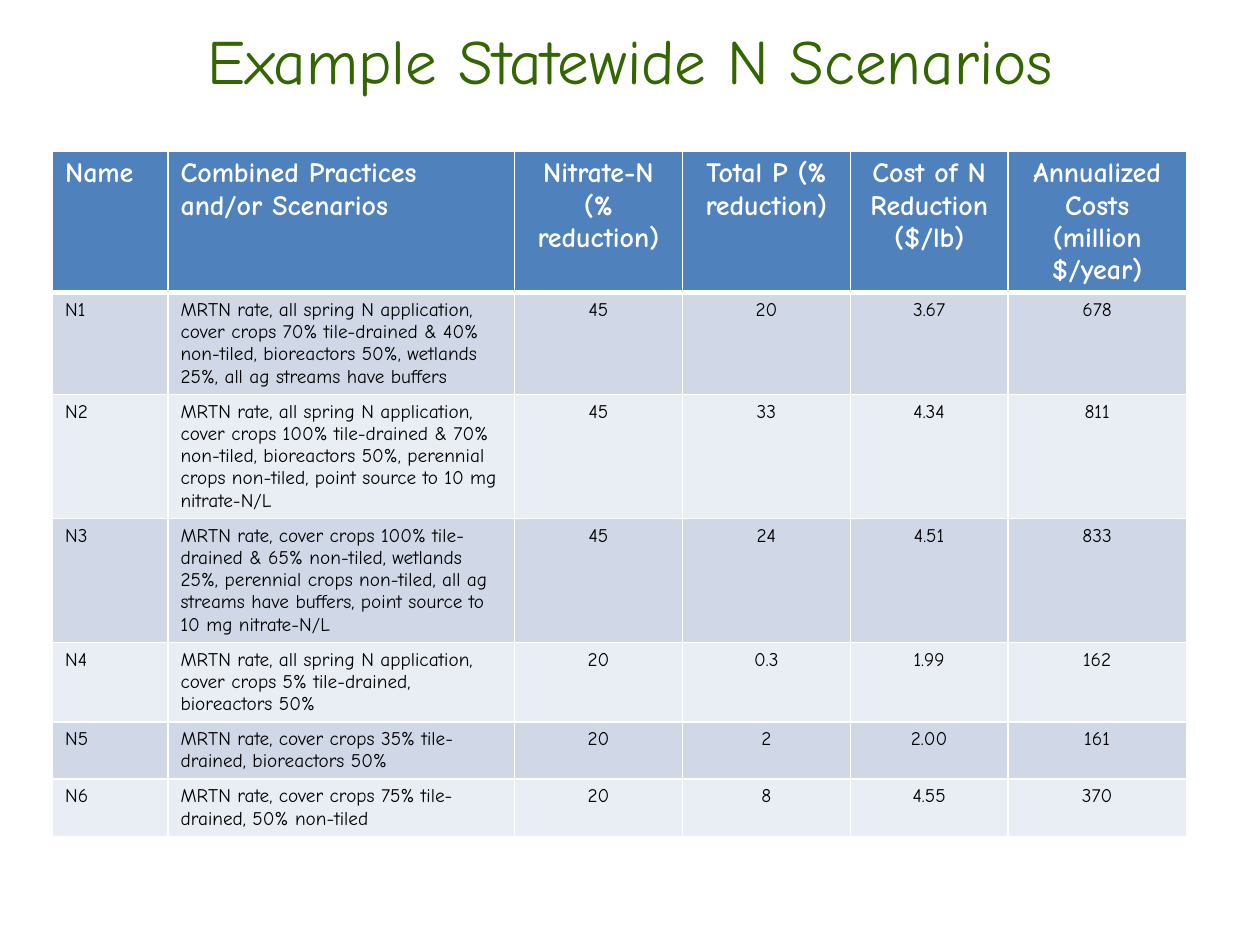
from dataclasses import dataclass

from lxml import etree
from pptx import Presentation
from pptx.dml.color import RGBColor
from pptx.enum.text import MSO_ANCHOR, PP_ALIGN
from pptx.oxml.ns import qn
from pptx.util import Pt

LEFT, CENTER = PP_ALIGN.LEFT, PP_ALIGN.CENTER
MIDDLE = MSO_ANCHOR.MIDDLE
TITLE_ONLY = 5


@dataclass(frozen=True)
class Theme:
    font: str = "Comic Neue"
    title_color: str = "336600"
    header_fill: str = "4F81BD"
    header_color: str = "FFFFFF"
    body_color: str = "000000"
    band_fills: tuple = ("D0D8E8", "E9EDF4")
    border_color: str = "FFFFFF"
    title_size: float = 36
    header_size: float = 16
    body_size: float = 11
    border_width: float = 1
    header_rule_width: float = 3


THEME = Theme()

TITLE = "Example Statewide N Scenarios"
HEADERS = ("Name", "Combined Practices and/or Scenarios", "Nitrate-N (% reduction)",
           "Total P (% reduction)", "Cost of N Reduction ($/lb)",
           "Annualized Costs (million $/year)")
SCENARIOS = (
    ("N1", "MRTN rate, all spring N application, cover crops 70% tile-drained & 40% "
     "non-tiled, bioreactors 50%, wetlands 25%, all ag streams have buffers",
     "45", "20", "3.67", "678"),
    ("N2", "MRTN rate, all spring N application, cover crops 100% tile-drained & 70% "
     "non-tiled, bioreactors 50%, perennial crops non-tiled, point source to 10 mg "
     "nitrate-N/L",
     "45", "33", "4.34", "811"),
    ("N3", "MRTN rate, cover crops 100% tile-drained & 65% non-tiled, wetlands 25%, "
     "perennial crops non-tiled, all ag streams have buffers, point source to 10 mg "
     "nitrate-N/L",
     "45", "24", "4.51", "833"),
    ("N4", "MRTN rate, all spring N application, cover crops 5% tile-drained, "
     "bioreactors 50%",
     "20", "0.3", "1.99", "162"),
    ("N5", "MRTN rate, cover crops 35% tile-drained, bioreactors 50%",
     "20", "2", "2.00", "161"),
    ("N6", "MRTN rate, cover crops 75% tile-drained, 50% non-tiled",
     "20", "8", "4.55", "370"),
)
COLUMN_WIDTHS = (66, 198, 96, 96, 90, 102)
ROW_HEIGHT = 29.5  # minimum; rows grow to fit their text
TEXT_COLUMNS = 2


def write_text(text_frame, text, size, color, bold=False, align=LEFT):
    paragraph = text_frame.paragraphs[0]
    paragraph.alignment = align
    run = paragraph.add_run()
    run.text = text
    run.font.name = THEME.font
    run.font.size = Pt(size)
    run.font.bold = bold
    run.font.color.rgb = RGBColor.from_string(color)


def set_borders(cell, bottom_width):
    """Draw all four borders; call before filling, as lines precede the fill in the XML."""
    properties = cell._tc.get_or_add_tcPr()
    widths = dict.fromkeys(("a:lnL", "a:lnR", "a:lnT"), THEME.border_width)
    widths["a:lnB"] = bottom_width
    for tag, width in widths.items():
        line = etree.SubElement(properties, qn(tag), w=str(Pt(width)))
        fill = etree.SubElement(line, qn("a:solidFill"))
        etree.SubElement(fill, qn("a:srgbClr"), val=THEME.border_color)


def format_cell(cell, fill, bottom_width):
    set_borders(cell, bottom_width)
    cell.fill.solid()
    cell.fill.fore_color.rgb = RGBColor.from_string(fill)


def add_title(slide, left, top, width, height):
    title = slide.shapes.title
    title.left, title.top, title.width, title.height = map(Pt, (left, top, width, height))
    title.text_frame.word_wrap = True
    title.text_frame.vertical_anchor = MIDDLE
    write_text(title.text_frame, TITLE, THEME.title_size, THEME.title_color, align=CENTER)


def add_scenario_table(slide, left, top, width, height):
    rows = (HEADERS, *SCENARIOS)
    table = slide.shapes.add_table(len(rows), len(HEADERS), Pt(left), Pt(top),
                                   Pt(width), Pt(height)).table
    for column, column_width in zip(table.columns, COLUMN_WIDTHS):
        column.width = Pt(column_width)
    for row_index, values in enumerate(rows):
        table.rows[row_index].height = Pt(ROW_HEIGHT)
        is_header = row_index == 0
        if is_header:
            fill, color, size = THEME.header_fill, THEME.header_color, THEME.header_size
            bottom_width = THEME.header_rule_width
        else:
            fill = THEME.band_fills[(row_index - 1) % 2]
            color, size = THEME.body_color, THEME.body_size
            bottom_width = THEME.border_width
        for column_index, value in enumerate(values):
            cell = table.cell(row_index, column_index)
            format_cell(cell, fill, bottom_width)
            write_text(cell.text_frame, value, size, color, bold=is_header,
                       align=LEFT if column_index < TEXT_COLUMNS else CENTER)
    # The first body row shares the header's thick rule.
    for cell in table.rows[1].cells:
        cell._tc.tcPr.find(qn("a:lnT")).set("w", str(Pt(THEME.header_rule_width)))


def main():
    presentation = Presentation()
    presentation.slide_width, presentation.slide_height = Pt(720), Pt(540)
    slide = presentation.slides.add_slide(presentation.slide_layouts[TITLE_ONLY])
    add_title(slide, 36, 6, 648, 56)
    add_scenario_table(slide, 30, 86.5, sum(COLUMN_WIDTHS),
                       ROW_HEIGHT * (len(SCENARIOS) + 1))
    presentation.save("out.pptx")


if __name__ == "__main__":
    main()
